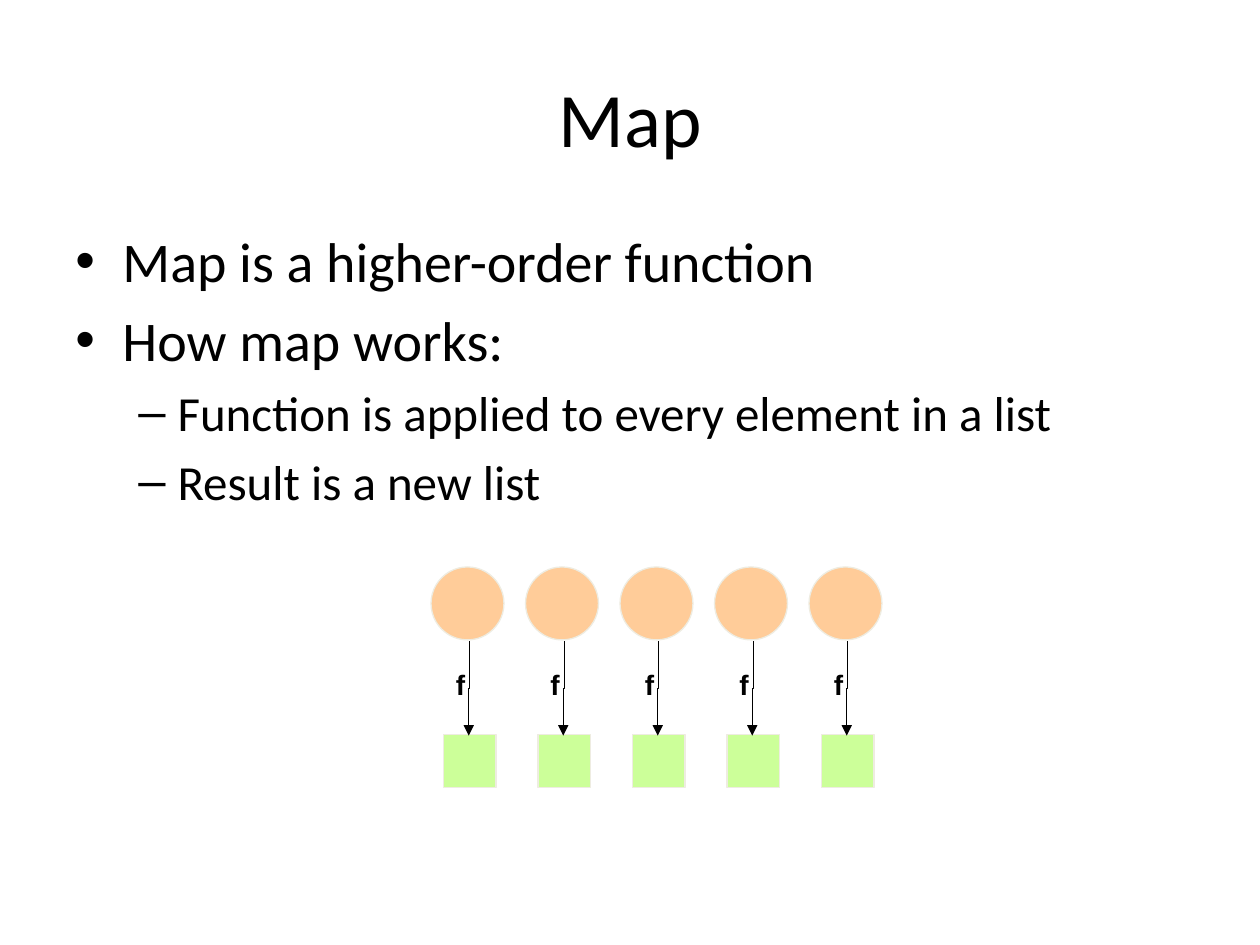
from dataclasses import dataclass

from lxml import etree
from pptx import Presentation
from pptx.dml.color import RGBColor
from pptx.enum.shapes import MSO_CONNECTOR, MSO_SHAPE
from pptx.enum.text import MSO_ANCHOR, MSO_AUTO_SIZE, PP_ALIGN
from pptx.oxml.ns import qn
from pptx.util import Cm, Pt

ELLIPSE, SQUARE = MSO_SHAPE.OVAL, MSO_SHAPE.RECTANGLE
ELBOW = MSO_CONNECTOR.ELBOW
MIDDLE, CENTER = MSO_ANCHOR.MIDDLE, PP_ALIGN.CENTER
FIT_SHAPE = MSO_AUTO_SIZE.SHAPE_TO_FIT_TEXT

BLACK, OUTLINE, ORANGE, GREEN = "000000", "EEECE1", "FFCC99", "CCFF99"
COLUMN_COUNT = 5
FIRST_LEFT, COLUMN_PITCH = 8.94, 1.905  # cm


@dataclass(frozen=True)
class BulletLevel:
    character: str
    size: float
    margin: float
    hanging: float


@dataclass(frozen=True)
class Bullet:
    text: str
    level: int = 0


LEVELS = [BulletLevel("•", 32, 0.95, 0.95), BulletLevel("–", 28, 2.06, 0.79)]
BULLETS = [
    Bullet("Map is a higher-order function"),
    Bullet("How map works:"),
    Bullet("Function is applied to every element in a list", 1),
    Bullet("Result is a new list", 1),
]


def color(hex_value: str) -> RGBColor:
    return RGBColor.from_string(hex_value)


def set_font(paragraph, name: str, size: float, bold: bool = False) -> None:
    font = paragraph.font
    font.name, font.size, font.bold = name, Pt(size), bold
    font.color.rgb = color(BLACK)


def add_text_frame(shapes, left: float, top: float, width: float, height: float,
                   wrap: bool = True):
    text_box = shapes.add_textbox(Cm(left), Cm(top), Cm(width), Cm(height))
    text_box.text_frame.word_wrap = wrap
    return text_box.text_frame


def add_node(shapes, kind, left: float, top: float, size: float, fill: str) -> None:
    shape = shapes.add_shape(kind, Cm(left), Cm(top), Cm(size), Cm(size))
    shape.shadow.inherit = False
    shape.fill.solid()
    shape.fill.fore_color.rgb = color(fill)
    shape.line.color.rgb = color(OUTLINE)
    shape.line.width = Pt(0.75)


def add_down_arrow(shapes, center: float, top: float, length: float, jog: float) -> None:
    """Draw a vertical elbow arrow as a horizontal one turned by 90 degrees."""
    middle = top + length / 2
    connector = shapes.add_connector(
        ELBOW, Cm(center - length / 2), Cm(middle - jog / 2),
        Cm(center + length / 2), Cm(middle + jog / 2))
    connector.line.color.rgb = color(BLACK)
    connector.line.width = Pt(0.75)
    properties = connector._element.spPr
    properties.find(qn("a:xfrm")).set("rot", str(90 * 60000))
    line = properties.find(qn("a:ln"))
    etree.SubElement(line, qn("a:tailEnd"), type="triangle")
    etree.SubElement(properties, qn("a:effectLst"))


def add_bullet(paragraph, bullet: Bullet) -> None:
    level = LEVELS[bullet.level]
    paragraph.text = bullet.text
    paragraph.level = bullet.level
    properties = paragraph._p.get_or_add_pPr()
    properties.set("marL", str(Cm(level.margin)))
    properties.set("indent", str(-Cm(level.hanging)))
    etree.SubElement(properties, qn("a:buFont"), typeface="Arial")
    etree.SubElement(properties, qn("a:buChar"), char=level.character)
    set_font(paragraph, "Calibri", level.size)


def add_mapping(shapes, left: float) -> None:
    """Draw the function arrow, its label and the resulting element."""
    add_node(shapes, SQUARE, left, 14.81, 1.06, GREEN)
    add_down_arrow(shapes, left + 0.52, 12.93, 1.9, 0.02)
    label_frame = add_text_frame(shapes, left, 13.34, 0.71, 0.94, wrap=False)
    label_frame.auto_size = FIT_SHAPE
    label = label_frame.paragraphs[0]
    label.text = "f"
    set_font(label, "Arial", 16, bold=True)


def main() -> None:
    presentation = Presentation()
    presentation.slide_width, presentation.slide_height = Cm(25.4), Cm(19.05)
    slide = presentation.slides.add_slide(presentation.slide_layouts[6])

    # Title
    title_frame = add_text_frame(slide.shapes, 1.27, 0.76, 22.86, 3.18)
    title_frame.vertical_anchor = MIDDLE
    title = title_frame.paragraphs[0]
    title.text = "Map"
    title.alignment = CENTER
    set_font(title, "Calibri", 44)

    # Bullets
    body_frame = add_text_frame(slide.shapes, 1.27, 4.45, 22.86, 12.57)
    for index, bullet in enumerate(BULLETS):
        paragraph = body_frame.add_paragraph() if index else body_frame.paragraphs[0]
        add_bullet(paragraph, bullet)
        if index:
            paragraph.space_before = Pt(0.2 * LEVELS[bullet.level].size)

    # Diagram: every list element is mapped by f to a new element
    column_lefts = [FIRST_LEFT + index * COLUMN_PITCH for index in range(COLUMN_COUNT)]
    for left in column_lefts:
        add_mapping(slide.shapes.add_group_shape().shapes, left)
    for left in column_lefts:
        add_node(slide.shapes, ELLIPSE, left - 0.25, 11.43, 1.47, ORANGE)

    presentation.save("out.pptx")


if __name__ == "__main__":
    main()
